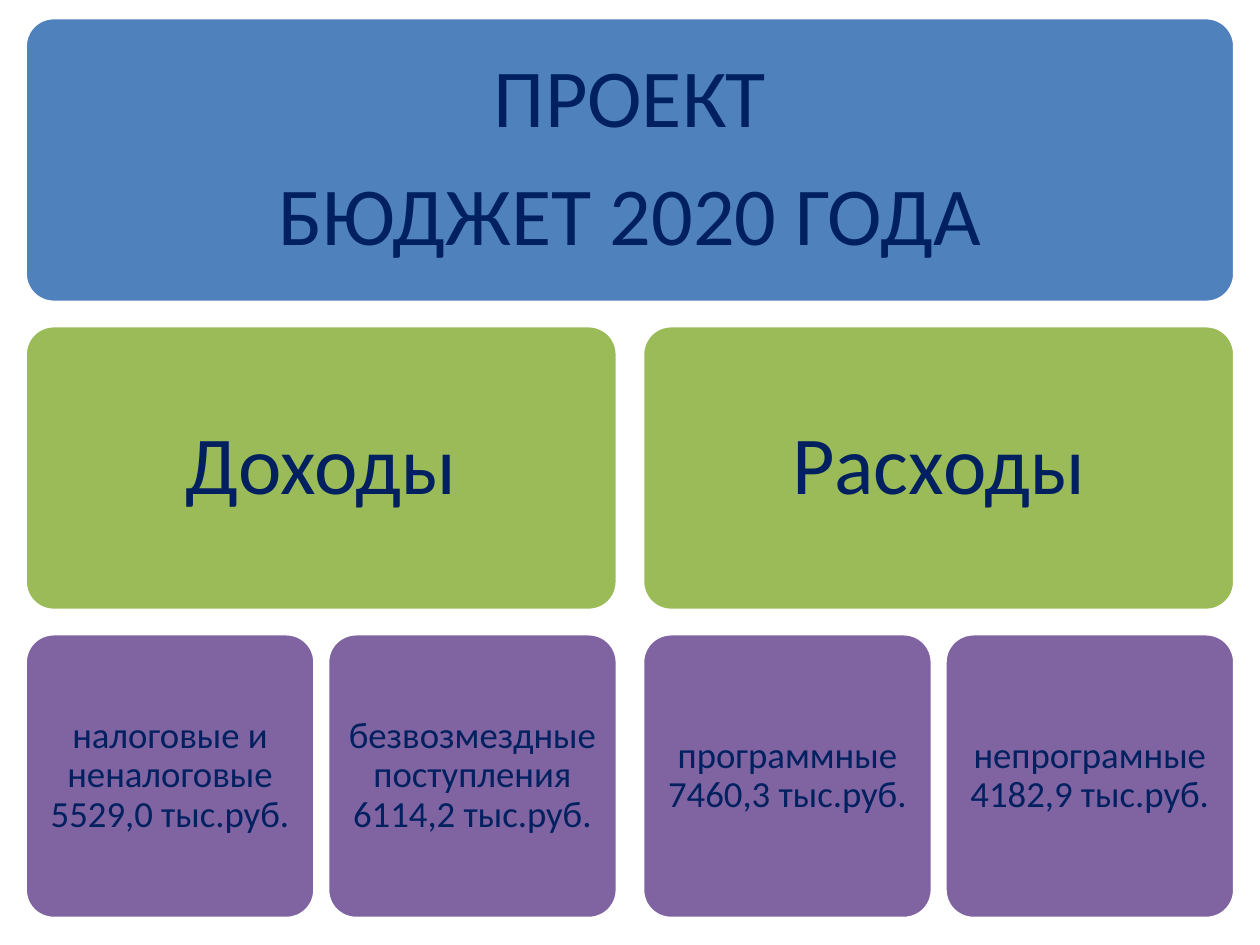
import pptx
import pptx.util
import pptx.dml.color
import pptx.enum.shapes
import pptx.enum.text

Inches, Pt = pptx.util.Inches, pptx.util.Pt
RGB = pptx.dml.color.RGBColor.from_string

# Content
TITLE = ["ПРОЕКТ", "БЮДЖЕТ 2020 ГОДА"]
BRANCHES = [
    ("Доходы", ["налоговые и неналоговые 5529,0 тыс.руб.",
                "безвозмездные поступления 6114,2 тыс.руб."]),
    ("Расходы", ["программные 7460,3 тыс.руб.",
                 "непрограмные 4182,9 тыс.руб."]),
]
COLORS = {"title": "4F81BD", "branch": "9BBB59", "item": "8064A2",
          "line": "FFFFFF", "text": "002060"}

# Grid
LEFT, TOP, WIDTH, HEIGHT = 0.2, 0.14, 9.6, 2.26
ROW_STEP = 2.445
BRANCH_GAP, ITEM_GAP = 0.2, 0.1
PAD = 0.07
BIG = {"size": 47, "inset": 0.2}
SMALL = {"size": 21, "inset": 0.09}


def write(sp, paragraphs, size, inset):
    tf = sp.text_frame
    tf.word_wrap = True
    tf.auto_size = pptx.enum.text.MSO_AUTO_SIZE.NONE
    tf.vertical_anchor = pptx.enum.text.MSO_ANCHOR.MIDDLE
    tf.margin_left = tf.margin_right = Inches(inset)
    tf.margin_top = tf.margin_bottom = Inches(inset)
    for i, text in enumerate(paragraphs):
        p = tf.paragraphs[0] if i == 0 else tf.add_paragraph()
        p.alignment = pptx.enum.text.PP_ALIGN.CENTER
        p.line_spacing = 0.9
        p.space_before = Pt(0)
        p.space_after = Pt(size * 0.35)
        r = p.add_run()
        r.text = text
        r.font.size = Pt(size)
        r.font.name = "Calibri"
        r.font.color.rgb = RGB(COLORS["text"])


def add_box(s, x, row, width, color):
    sp = s.shapes.add_shape(
        pptx.enum.shapes.MSO_SHAPE.ROUNDED_RECTANGLE, Inches(x),
        Inches(TOP + row * ROW_STEP), Inches(width), Inches(HEIGHT))
    sp.adjustments[0] = 0.1
    sp.shadow.inherit = False
    sp.fill.solid()
    sp.fill.fore_color.rgb = RGB(COLORS[color])
    sp.line.color.rgb = RGB(COLORS["line"])
    sp.line.width = Pt(2)
    return sp


def main():
    prs = pptx.Presentation()
    prs.slide_width, prs.slide_height = Inches(10), Inches(7.5)
    s = prs.slides.add_slide(prs.slide_layouts[5])

    # Title on its box, brought in front of it
    box = add_box(s, LEFT, 0, WIDTH, "title")
    title = s.shapes.title
    title.left, title.top = Inches(LEFT + PAD), Inches(TOP + PAD)
    title.width = Inches(WIDTH - 2 * PAD)
    title.height = Inches(HEIGHT - 2 * PAD)
    box._element.addnext(title._element)
    write(title, TITLE, **BIG)

    # Branches, each over its items
    branch_w = (WIDTH - BRANCH_GAP * (len(BRANCHES) - 1)) / len(BRANCHES)
    for i, (name, items) in enumerate(BRANCHES):
        x = LEFT + i * (branch_w + BRANCH_GAP)
        write(add_box(s, x, 1, branch_w, "branch"), [name], **BIG)
        item_w = (branch_w - ITEM_GAP * (len(items) - 1)) / len(items)
        for j, item in enumerate(items):
            item_x = x + j * (item_w + ITEM_GAP)
            write(add_box(s, item_x, 2, item_w, "item"), [item], **SMALL)

    prs.save("out.pptx")


if __name__ == "__main__":
    main()
